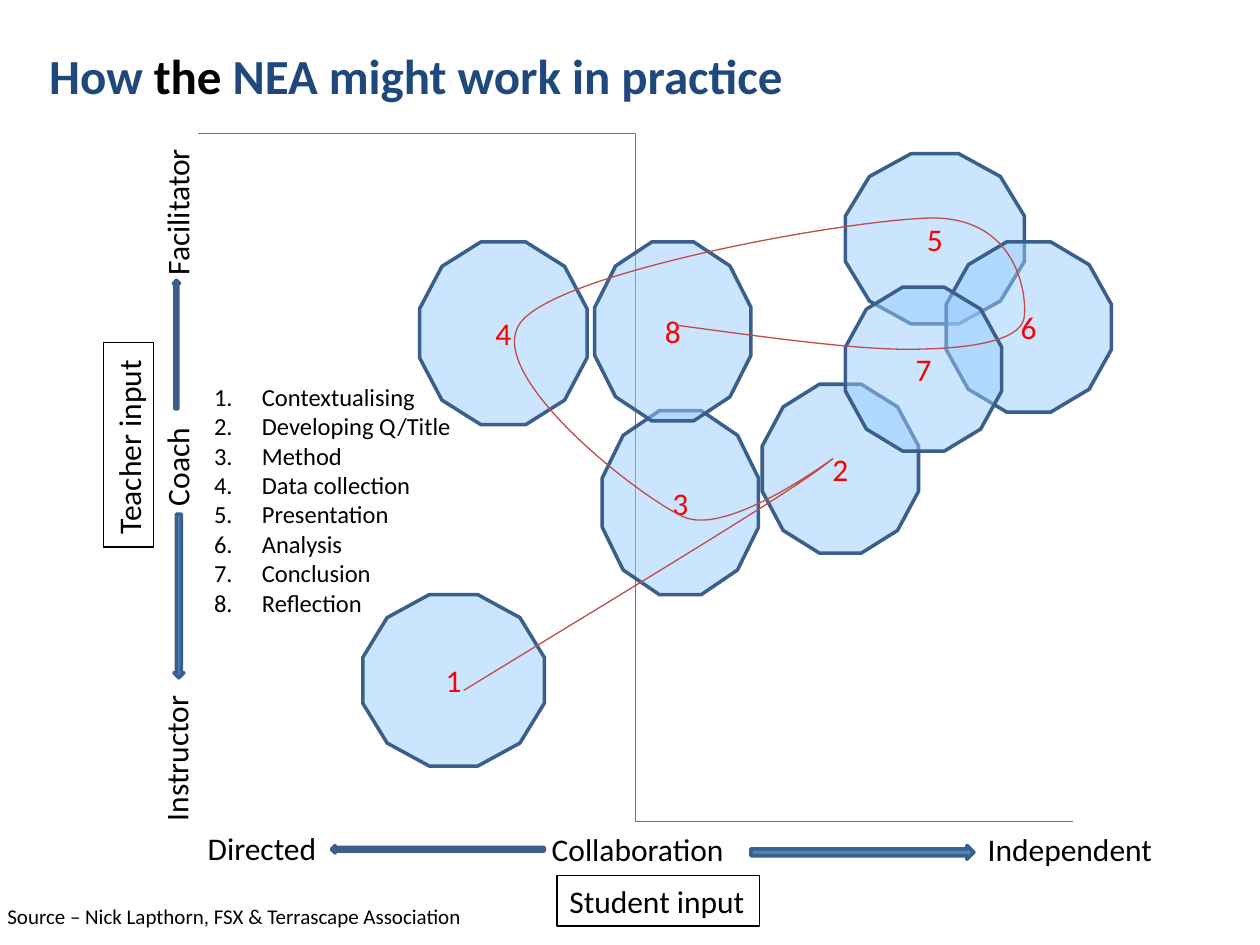
from dataclasses import dataclass

from lxml.etree import SubElement
from pptx import Presentation
from pptx.dml.color import RGBColor
from pptx.enum.shapes import MSO_CONNECTOR, MSO_SHAPE
from pptx.enum.text import MSO_ANCHOR, MSO_AUTO_SIZE, PP_ALIGN
from pptx.oxml.ns import qn
from pptx.util import Emu, Pt

EMU_PER_PX = 9144  # 100 px to the inch


@dataclass(frozen=True)
class Theme:
    font: str = "Calibri"
    black: str = "000000"
    title: str = "1F497D"
    stage_fill: str = "99CCFF"
    stage_alpha: int = 50000
    stage_text: str = "FF0000"
    arrow_fill: str = "4F81BD"
    outline: str = "3A5F8C"
    axis: str = "4B7EBC"
    route: str = "BF4C48"
    title_size: int = 28
    label_size: int = 18
    list_size: int = 14
    source_size: int = 12
    thin: float = 0.75
    thick: float = 2


THEME = Theme()


@dataclass(frozen=True)
class Box:
    left: int
    top: int
    width: int
    height: int
    rotation: int = 0

    def emu(self) -> tuple:
        return tuple(px(n) for n in (self.left, self.top, self.width, self.height))


@dataclass(frozen=True)
class Label:
    text: str
    box: Box
    size: int = THEME.label_size
    framed: bool = False


@dataclass(frozen=True)
class Stage:
    number: int
    box: Box


LABELS = [
    Label("Directed", Box(155, 653, 108, 40)),
    Label("Independent", Box(774, 654, 152, 40)),
    Label("Collaboration", Box(428, 654, 159, 40)),
    Label("Instructor", Box(79, 581, 121, 40, 270)),
    Label("Coach", Box(99, 350, 83, 40, 270)),
    Label("Facilitator", Box(79, 147, 123, 40, 270)),
    Label("Student input", Box(442, 695, 161, 40), framed=True),
    Label("Teacher input", Box(21, 333, 162, 40, 270), framed=True),
    Label("Source – Nick Lapthorn, FSX & Terrascape Association",
          Box(-4, 712, 401, 30), THEME.source_size),
]
ARROWS = [
    Box(89, 271, 102, 5, 270),
    Box(77, 469, 130, 8, 90),
    Box(263, 671, 169, 6, 180),
    Box(596, 671, 177, 11),
]
STAGES = [
    Stage(1, Box(288, 472, 144, 136)),
    Stage(2, Box(605, 305, 124, 134)),
    Stage(3, Box(478, 326, 124, 146)),
    Stage(4, Box(333, 192, 133, 145)),
    Stage(5, Box(671, 122, 142, 135)),
    Stage(6, Box(751, 192, 131, 135)),
    Stage(7, Box(671, 228, 124, 130)),
    Stage(8, Box(472, 192, 124, 142)),
]
STAGE_NAMES = ["Contextualising", "Developing Q/Title", "Method", "Data collection",
               "Presentation", "Analysis", "Conclusion", "Reflection"]
STAGE_LIST = Box(160, 298, 218, 199)
LIST_INDENT = 38
TITLE = Box(29, 31, 610, 57)
TITLE_RUNS = [("How ", THEME.title), ("the", THEME.black),
              (" NEA might work in practice", THEME.title)]
AXIS_START, AXIS_END = (852, 652), (157, 106)
ROUTE_START = (368, 548)
ROUTE_CONTROLS = [
    (497, 469), (627, 391), (656, 368),
    (685, 345), (582, 429), (542, 410),
    (502, 391), (381, 294), (414, 255),
    (447, 215), (674, 174), (740, 173),
    (807, 173), (815, 233), (813, 251),
    (812, 268), (779, 276), (733, 277),
    (687, 279), (611, 268), (536, 258),
]


def px(value: int) -> Emu:
    return Emu(value * EMU_PER_PX)


def rgb(color: str) -> RGBColor:
    return RGBColor.from_string(color)


def format_run(run, size: int, color: str, bold: bool = False) -> None:
    run.font.name = THEME.font
    run.font.size = Pt(size)
    run.font.bold = bold
    run.font.color.rgb = rgb(color)


def set_line(shape, color: str, width: float) -> None:
    shape.line.color.rgb = rgb(color)
    shape.line.width = Pt(width)


def add_text(slide, box: Box, text: str, size: int):
    shape = slide.shapes.add_textbox(*box.emu())
    shape.rotation = box.rotation
    frame = shape.text_frame
    frame.text = text
    frame.word_wrap = False
    frame.auto_size = MSO_AUTO_SIZE.SHAPE_TO_FIT_TEXT
    for paragraph in frame.paragraphs:
        format_run(paragraph.runs[0], size, THEME.black)
    return shape


def add_label(slide, label: Label) -> None:
    shape = add_text(slide, label.box, label.text, label.size)
    if label.framed:
        set_line(shape, THEME.black, THEME.thin)


def add_outlined(slide, kind: MSO_SHAPE, box: Box, fill: str):
    shape = slide.shapes.add_shape(kind, *box.emu())
    shape.rotation = box.rotation
    shape.shadow.inherit = False
    shape.fill.solid()
    shape.fill.fore_color.rgb = rgb(fill)
    set_line(shape, THEME.outline, THEME.thick)
    return shape


def add_stage(slide, stage: Stage) -> None:
    shape = add_outlined(slide, MSO_SHAPE.DODECAGON, stage.box, THEME.stage_fill)
    color = shape.fill._xPr.find(qn("a:solidFill")).find(qn("a:srgbClr"))
    SubElement(color, qn("a:alpha"), val=str(THEME.stage_alpha))
    frame = shape.text_frame
    frame.text = str(stage.number)
    frame.vertical_anchor = MSO_ANCHOR.MIDDLE
    paragraph = frame.paragraphs[0]
    paragraph.alignment = PP_ALIGN.CENTER
    format_run(paragraph.runs[0], THEME.label_size, THEME.stage_text)


def add_stage_list(slide) -> None:
    shape = add_text(slide, STAGE_LIST, "\n".join(STAGE_NAMES), THEME.list_size)
    indent = px(LIST_INDENT)
    for paragraph in shape.text_frame.paragraphs:
        properties = paragraph._p.get_or_add_pPr()
        properties.set("marL", str(indent))
        properties.set("indent", str(-indent))
        SubElement(properties, qn("a:buFont"), typeface=THEME.font)
        SubElement(properties, qn("a:buAutoNum"), type="arabicPeriod")


def add_axis(slide) -> None:
    ends = [px(n) for n in (*AXIS_START, *AXIS_END)]
    connector = slide.shapes.add_connector(MSO_CONNECTOR.ELBOW, *ends)
    set_line(connector, THEME.axis, THEME.thin)
    SubElement(connector._element.spPr, qn("a:effectLst"))


def add_route(slide) -> None:
    """Draw the control polygon, then turn each three segments into one Bézier curve."""
    builder = slide.shapes.build_freeform(*ROUTE_START, scale=EMU_PER_PX)
    builder.add_line_segments(ROUTE_CONTROLS, close=False)
    shape = builder.convert_to_shape()
    shape.shadow.inherit = False
    shape.fill.background()
    set_line(shape, THEME.route, THEME.thin)
    outline = next(shape._element.iter(qn("a:path")))
    for index, segment in enumerate(outline.findall(qn("a:lnTo"))):
        if index % 3 == 0:
            curve = SubElement(outline, qn("a:cubicBezTo"))
        curve.append(segment[0])
        outline.remove(segment)


def set_title(slide) -> None:
    title = slide.shapes.title
    title.left, title.top, title.width, title.height = TITLE.emu()
    frame = title.text_frame
    frame.word_wrap = False
    frame.auto_size = MSO_AUTO_SIZE.NONE
    frame.vertical_anchor = MSO_ANCHOR.TOP
    paragraph = frame.paragraphs[0]
    paragraph.alignment = PP_ALIGN.LEFT
    for text, color in TITLE_RUNS:
        run = paragraph.add_run()
        run.text = text
        format_run(run, THEME.title_size, color, bold=True)


def main() -> None:
    presentation = Presentation()
    presentation.slide_width, presentation.slide_height = px(1000), px(750)
    slide = presentation.slides.add_slide(presentation.slide_layouts[5])
    set_title(slide)
    add_axis(slide)
    for label in LABELS:
        add_label(slide, label)
    for arrow in ARROWS:
        add_outlined(slide, MSO_SHAPE.RIGHT_ARROW, arrow, THEME.arrow_fill)
    for stage in STAGES:
        add_stage(slide, stage)
    add_stage_list(slide)
    add_route(slide)
    presentation.save("out.pptx")


if __name__ == "__main__":
    main()
